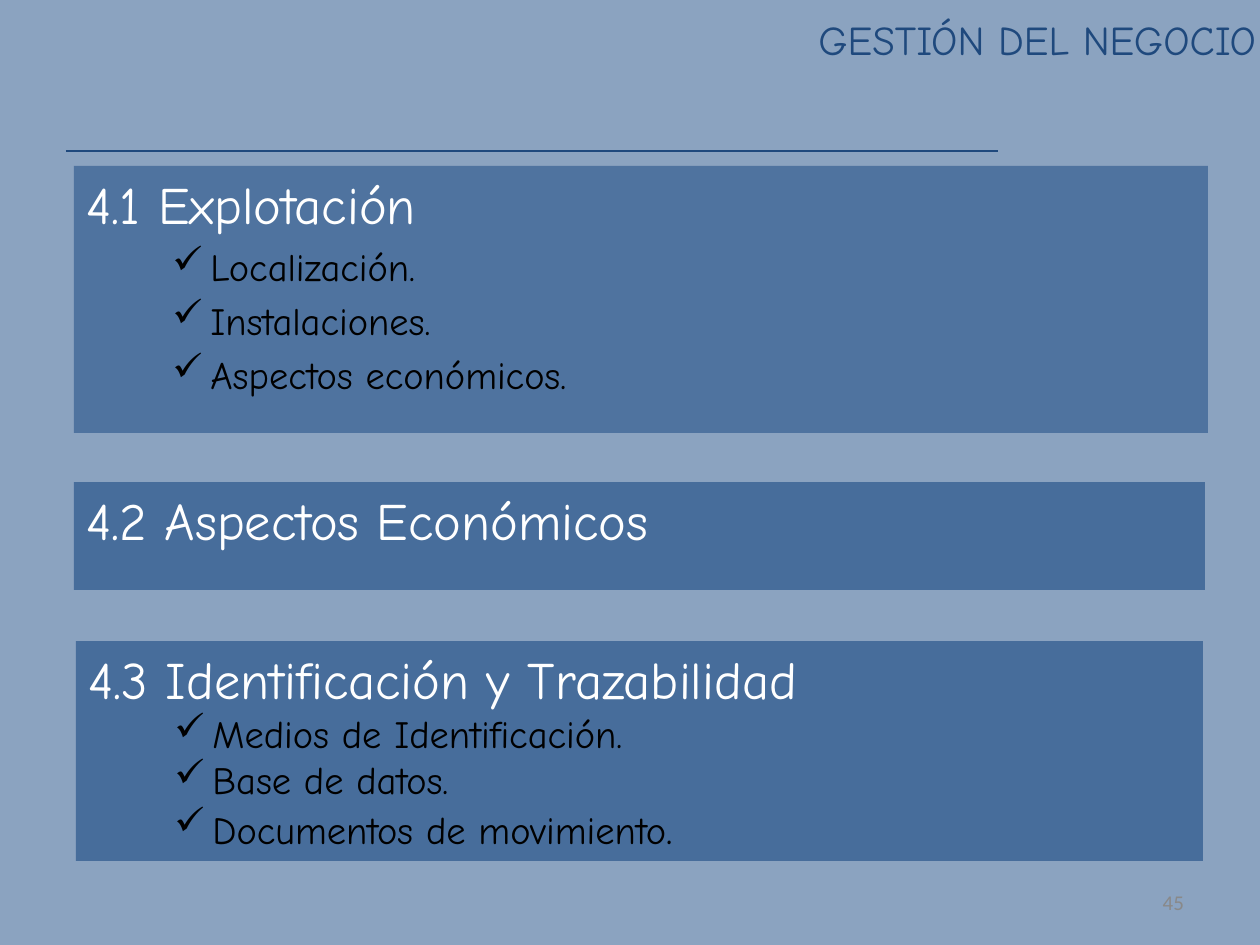
from lxml import etree
from pptx import Presentation
from pptx.dml.color import RGBColor
from pptx.enum.shapes import MSO_CONNECTOR, MSO_SHAPE
from pptx.enum.text import MSO_ANCHOR, MSO_AUTO_SIZE, PP_ALIGN
from pptx.oxml.ns import qn
from pptx.util import Pt

RECT, LINE = MSO_SHAPE.RECTANGLE, MSO_CONNECTOR.STRAIGHT
TOP, MID = MSO_ANCHOR.TOP, MSO_ANCHOR.MIDDLE
LEFT, RIGHT = PP_ALIGN.LEFT, PP_ALIGN.RIGHT
NONE = MSO_AUTO_SIZE.NONE

BACK = RGBColor(0x8B, 0xA3, 0xC0)
BLUE = RGBColor(0x37, 0x60, 0x92)
NAVY = RGBColor(0x1F, 0x49, 0x7D)
GRAY = RGBColor(0x89, 0x89, 0x89)
WHITE = RGBColor(255, 255, 255)
BLACK = RGBColor(0, 0, 0)
FONT = "Comic Neue"


def px(n):
    return round(n * 914400 / 126)


def put(par, text, size=22, color=BLACK, font=FONT, align=LEFT, gap=0):
    par.alignment = align
    if gap:
        par.space_before = Pt(gap)
    run = par.add_run()
    run.text = text
    run.font.size, run.font.name = Pt(size), font
    run.font.color.rgb = color


def frame(shape, anchor=TOP, pad=None):
    body = shape.text_frame
    body.word_wrap, body.auto_size = True, NONE
    body.vertical_anchor = anchor
    if pad is not None:
        body.margin_left = body.margin_right = px(pad)
        body.margin_top = body.margin_bottom = px(pad)
    return body


def check(par):
    """Give a paragraph a hanging check mark."""
    props = par._p.get_or_add_pPr()
    props.set("lvl", "1")
    props.set("marL", str(px(124)))
    props.set("indent", str(-px(38)))
    etree.SubElement(props, qn("a:buChar")).set("char", "✓")


def header(slide, box, text):
    x, y, w, h = box
    # Title at the top right
    title = slide.shapes.title
    title.left, title.top = px(x), px(y)
    title.width, title.height = px(w), px(48)
    put(frame(title, MID, 0).paragraphs[0], text, 23.4, NAVY, align=RIGHT)
    # Rule under the title
    rule = slide.shapes.add_connector(LINE, px(x), px(y + h),
                                      px(x + 932), px(y + h))
    rule.line.color.rgb, rule.line.width = NAVY, Pt(1.5)
    etree.SubElement(rule._element.spPr, qn("a:effectLst"))


def panel(slide, box, head, items=(), alpha=80, gap=0):
    # Translucent block
    rect = slide.shapes.add_shape(RECT, *map(px, box))
    rect.shadow.inherit = False
    rect.fill.solid()
    rect.fill.fore_color.rgb = BLUE
    tone = rect._element.spPr.find(".//" + qn("a:srgbClr"))
    etree.SubElement(tone, qn("a:alpha")).set("val", str(alpha * 1000))
    rect.line.fill.background()
    # Heading and checked items
    body = frame(rect)
    put(body.paragraphs[0], head, 30, WHITE)
    for item in items:
        par = body.add_paragraph()
        check(par)
        put(par, item, gap=gap)
    return body


def number(slide, box, text):
    note = slide.shapes.add_textbox(*map(px, box))
    put(frame(note, MID, 0).paragraphs[0], text, 12, GRAY, "Calibri", RIGHT)


def main():
    deck = Presentation()
    deck.slide_width, deck.slide_height = px(1260), px(945)
    slide = deck.slides.add_slide(deck.slide_layouts[5])
    slide.background.fill.solid()
    slide.background.fill.fore_color.rgb = BACK

    header(slide, (66, 15, 1190, 136), "GESTIÓN DEL NEGOCIO")
    panel(slide, (74, 166, 1134, 267), "4.1 Explotación",
          ("Localización.", "Instalaciones.", "Aspectos económicos."),
          alpha=71, gap=4.4)
    panel(slide, (74, 482, 1131, 108), "4.2 Aspectos Económicos")
    trace = panel(slide, (76, 641, 1127, 220),
                  "4.3 Identificación y Trazabilidad",
                  ("Medios de Identificación.", "Base de datos.",
                   "Documentos de movimiento"))
    put(trace.paragraphs[-1], ".", 24)
    number(slide, (1084, 888, 100, 28), "45")
    deck.save("out.pptx")


if __name__ == "__main__":
    main()
